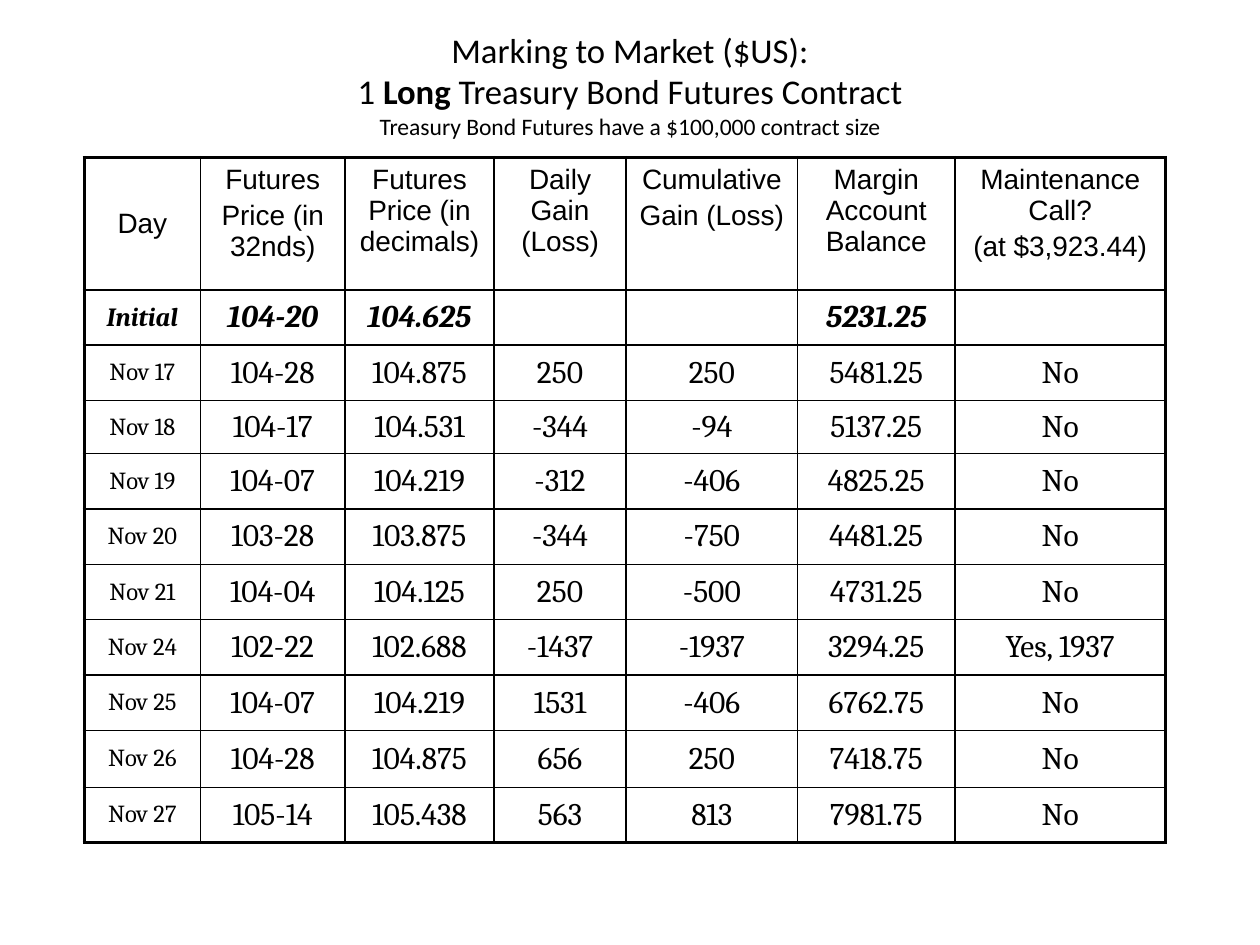
from lxml.etree import SubElement
from pptx import Presentation
from pptx.dml.color import RGBColor
from pptx.enum.text import MSO_ANCHOR, PP_ALIGN
from pptx.oxml.ns import qn
from pptx.util import Inches, Pt

INK = "000000"

# Title lines, each a list of (text, size, bold)
title = [
    [("Marking to Market ($US):", 19.8, False)],
    [("1 ", 19.8, False), ("Long", 19.8, True),
     (" Treasury Bond Futures Contract", 19.8, False)],
    [("Treasury Bond Futures have a $100,000 contract size", 13.5, False)],
]

# Header cells, each a list of paragraphs
heads = [
    ["Day"],
    ["Futures", "Price (in 32nds)"],
    ["Futures Price (in decimals)"],
    ["Daily Gain (Loss)"],
    ["Cumulative", "Gain (Loss)"],
    ["Margin Account Balance"],
    ["Maintenance Call?", "(at $3,923.44)"],
]
days = [
    ("Initial", "104-20", "104.625", "", "", "5231.25", ""),
    ("Nov 17", "104-28", "104.875", "250", "250", "5481.25", "No"),
    ("Nov 18", "104-17", "104.531", "-344", "-94", "5137.25", "No"),
    ("Nov 19", "104-07", "104.219", "-312", "-406", "4825.25", "No"),
    ("Nov 20", "103-28", "103.875", "-344", "-750", "4481.25", "No"),
    ("Nov 21", "104-04", "104.125", "250", "-500", "4731.25", "No"),
    ("Nov 24", "102-22", "102.688", "-1437", "-1937", "3294.25", "Yes, 1937"),
    ("Nov 25", "104-07", "104.219", "1531", "-406", "6762.75", "No"),
    ("Nov 26", "104-28", "104.875", "656", "250", "7418.75", "No"),
    ("Nov 27", "105-14", "105.438", "563", "813", "7981.75", "No"),
]
widths = [0.92, 1.15, 1.18, 1.05, 1.36, 1.25, 1.67]
heights = [1.05, 0.44, 0.44, 0.42, 0.44, 0.44, 0.44, 0.44, 0.44, 0.45, 0.44]


def color(code):
    return RGBColor.from_string(code)


def add_run(para, text, face, size, bold=False, italic=False):
    run = para.add_run()
    run.text = text
    font = run.font
    font.name, font.size = face, Pt(size)
    font.bold, font.italic = bold, italic
    font.color.rgb = color(INK)


def add_edge(cell, side, width):
    props = cell._tc.get_or_add_tcPr()
    line = SubElement(props, qn(f"a:{side}"), w=str(Pt(width)))
    fill = SubElement(line, qn("a:solidFill"))
    SubElement(fill, qn("a:srgbClr"), val=INK)


def fill_cell(cell, texts, face, size, **style):
    frame = cell.text_frame
    for num, text in enumerate(texts):
        para = frame.add_paragraph() if num else frame.paragraphs[0]
        para.alignment = PP_ALIGN.CENTER
        para.space_before = Pt(size * 0.2)
        if text:
            add_run(para, text, face, size, **style)


deck = Presentation()
deck.slide_width, deck.slide_height = Inches(10), Inches(7.5)
slide = deck.slides.add_slide(deck.slide_layouts[6])

# Title
box = slide.shapes.add_textbox(Inches(0.75), Inches(0.17), Inches(8.5), Inches(1))
frame = box.text_frame
frame.word_wrap = True
frame.vertical_anchor = MSO_ANCHOR.MIDDLE
para = frame.paragraphs[0]
para.alignment = PP_ALIGN.CENTER
for num, line in enumerate(title):
    if num:
        para.add_line_break()
    for text, size, bold in line:
        add_run(para, text, "Calibri", size, bold)

# Table grid
rows, cols = len(heights), len(widths)
table = slide.shapes.add_table(
    rows, cols, Inches(0.67), Inches(1.25),
    Inches(sum(widths)), Inches(sum(heights))).table
table.first_row = table.horz_banding = False
for col, width in zip(table.columns, widths):
    col.width = Inches(width)
for row, height in zip(table.rows, heights):
    row.height = Inches(height)

# Cells: thick outer frame, thin inner lines
for r, data in enumerate([heads] + days):
    for c, value in enumerate(data):
        cell = table.cell(r, c)
        outer = {"lnL": c == 0, "lnR": c == cols - 1,
                 "lnT": r == 0, "lnB": r == rows - 1}
        for side, thick in outer.items():
            add_edge(cell, side, 2.25 if thick else 1)
        cell.fill.background()
        top = r == 0 and c > 0
        cell.vertical_anchor = MSO_ANCHOR.TOP if top else MSO_ANCHOR.MIDDLE
        if r == 0:
            fill_cell(cell, value, "Arial", 16)
        else:
            first = r == 1
            size = 18 if c else 15 if first else 14
            fill_cell(cell, [value], "Cambria", size, bold=first, italic=first)

deck.save("out.pptx")
